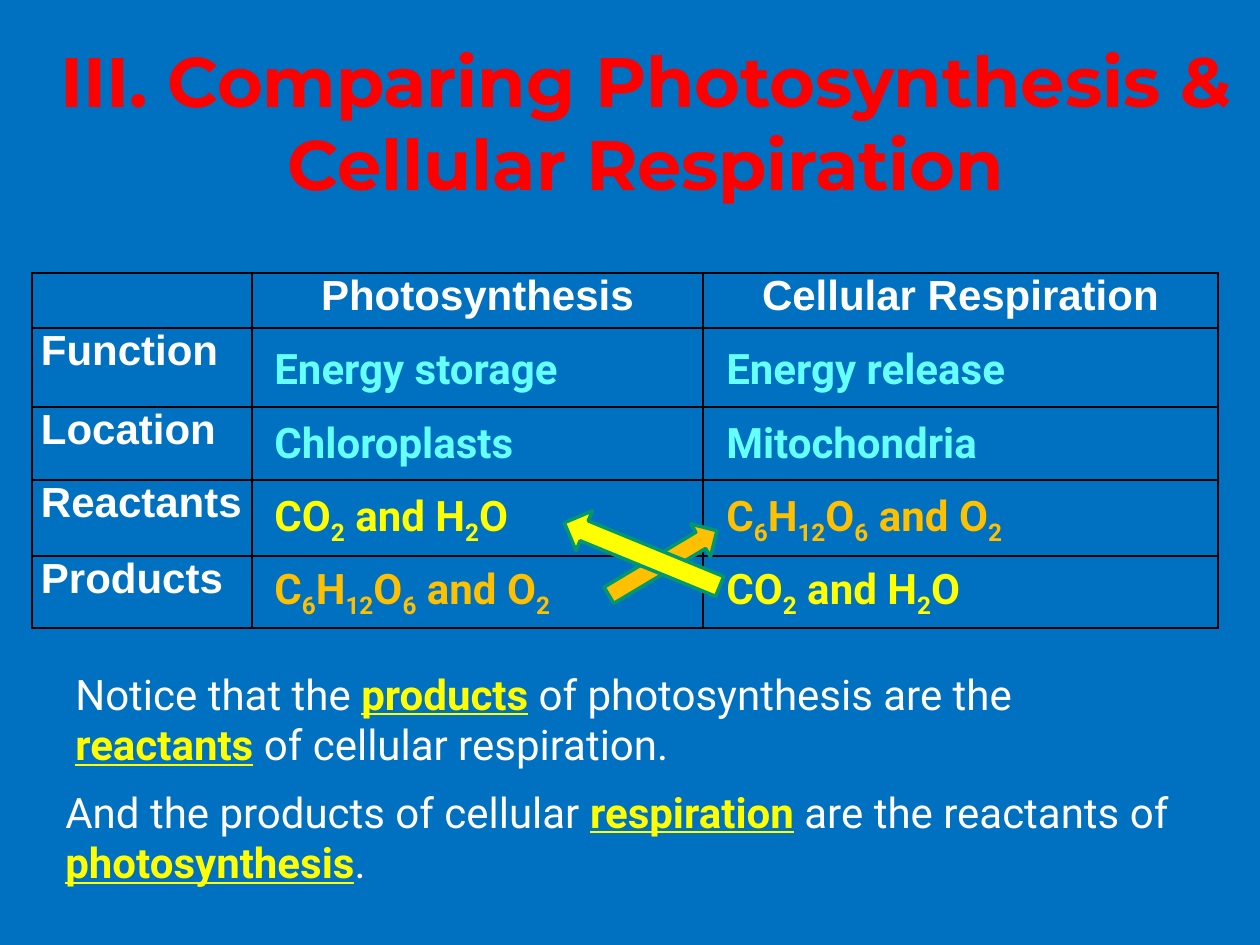
import pptx
import pptx.util
import pptx.dml.color
import pptx.enum.shapes
import pptx.enum.text
import pptx.oxml
import pptx.oxml.ns
from dataclasses import dataclass


@dataclass(frozen=True)
class Theme:
    background: str = "0070C0"
    title: str = "FF0000"
    text: str = "FFFFFF"
    process: str = "66FFFF"
    yellow: str = "FFFF00"
    orange: str = "FFC000"
    outline: str = "009771"
    border: str = "000000"
    title_font: str = "Montserrat"
    table_font: str = "Arial"
    body_font: str = "Roboto"
    title_size: int = 40
    body_size: int = 24


def px(length):
    return round(length * 914400 / 126)


def rgb(value):
    return pptx.dml.color.RGBColor.from_string(value)


class SlideBuilder:
    def __init__(self, slide, theme):
        self.slide = slide
        self.theme = theme
        fill = slide.background.fill
        fill.solid()
        fill.fore_color.rgb = rgb(theme.background)

    def style(self, paragraph, name, size, color, bold):
        font = paragraph.font
        font.name = name
        font.size = pptx.util.Pt(size)
        font.color.rgb = rgb(color)
        font.bold = bold

    def title(self, text, left, top, width, height):
        shape = self.slide.shapes.title
        shape.left, shape.top = px(left), px(top)
        shape.width, shape.height = px(width), px(height)
        frame = shape.text_frame
        frame.text = text
        frame.auto_size = pptx.enum.text.MSO_AUTO_SIZE.NONE
        frame.vertical_anchor = pptx.enum.text.MSO_ANCHOR.MIDDLE
        paragraph = frame.paragraphs[0]
        paragraph.alignment = pptx.enum.text.PP_ALIGN.CENTER
        self.style(paragraph, self.theme.title_font, self.theme.title_size,
                   self.theme.title, True)

    def border(self, cell):
        properties = cell._tc.get_or_add_tcPr()
        for side in ("lnL", "lnR", "lnT", "lnB"):
            properties.append(pptx.oxml.parse_xml(
                f'<a:{side} {pptx.oxml.ns.nsdecls("a")} w="12700"><a:solidFill>'
                f'<a:srgbClr val="{self.theme.border}"/></a:solidFill></a:{side}>'))

    def table(self, left, top, widths, heights, headers, labels):
        table = self.slide.shapes.add_table(
            len(heights), len(widths), px(left), px(top),
            px(sum(widths)), px(sum(heights))).table
        table.first_row = table.horz_banding = False
        for column, width in zip(table.columns, widths):
            column.width = px(width)
        for row, height in zip(table.rows, heights):
            row.height = px(height)
        for cell in table.iter_cells():
            self.border(cell)
            cell.fill.background()
        for index, text in enumerate(headers, 1):
            self.label(table.cell(0, index), text, pptx.enum.text.PP_ALIGN.CENTER)
        for index, text in enumerate(labels, 1):
            self.label(table.cell(index, 0), text, pptx.enum.text.PP_ALIGN.LEFT)

    def label(self, cell, text, alignment):
        cell.margin_left = cell.margin_right = px(9)
        cell.margin_top = cell.margin_bottom = 0
        cell.text = text
        paragraph = cell.text_frame.paragraphs[0]
        paragraph.alignment = alignment
        self.style(paragraph, self.theme.table_font, self.theme.body_size,
                   self.theme.text, True)

    def text(self, text, left, top, width, height, color, bold=False):
        frame = self.slide.shapes.add_textbox(
            px(left), px(top), px(width), px(height)).text_frame
        frame.word_wrap = True
        frame.auto_size = pptx.enum.text.MSO_AUTO_SIZE.SHAPE_TO_FIT_TEXT
        paragraph = frame.paragraphs[0]
        self.style(paragraph, self.theme.body_font, self.theme.body_size, color, bold)
        return paragraph

    def formula(self, text, left, top, width, height, color):
        paragraph = self.text(text, left, top, width, height, color, True)
        for index, part in enumerate(text.split("_")):
            run = paragraph.add_run()
            run.text = part
            if index % 2:
                run._r.get_or_add_rPr().set("baseline", "-25000")

    def note(self, text, left, top, width, height):
        paragraph = self.text(text, left, top, width, height, self.theme.text)
        for index, part in enumerate(text.split("*")):
            run = paragraph.add_run()
            run.text = part
            if index % 2:
                run.font.bold = run.font.underline = True
                run.font.color.rgb = rgb(self.theme.yellow)

    def arrow(self, left, top, width, height, rotation, color):
        shape = self.slide.shapes.add_shape(
            pptx.enum.shapes.MSO_SHAPE.RIGHT_ARROW,
            px(left), px(top), px(width), px(height))
        shape.rotation = rotation
        shape.shadow.inherit = False
        shape.fill.solid()
        shape.fill.fore_color.rgb = rgb(color)
        shape.line.color.rgb = rgb(self.theme.outline)
        shape.line.width = pptx.util.Pt(2)


def main():
    theme = Theme()
    presentation = pptx.Presentation()
    presentation.slide_width, presentation.slide_height = px(1260), px(945)
    slide = presentation.slides.add_slide(presentation.slide_layouts[5])
    builder = SlideBuilder(slide, theme)

    builder.title("III. Comparing Photosynthesis & Cellular Respiration",
                  32, 42, 1228, 158)
    builder.table(32, 273, (220, 451, 515), (55, 79, 73, 76, 72),
                  ("Photosynthesis", "Cellular Respiration"),
                  ("Function", "Location", "Reactants", "Products"))

    gases, sugar = "CO_2_ and H_2_O", "C_6_H_12_O_6_ and O_2_"
    answers = (
        (("Energy storage", theme.process), ("Energy release", theme.process)),
        (("Chloroplasts", theme.process), ("Mitochondria", theme.process)),
        ((gases, theme.yellow), (sugar, theme.orange)),
        ((sugar, theme.orange), (gases, theme.yellow)),
    )
    for row, pair in enumerate(answers):
        for left, (text, color) in zip((262, 714), pair):
            builder.formula(text.rstrip("_"), left, 336 + round(73.5 * row),
                            431, 64, color)

    builder.note("Notice that the *products* of photosynthesis are the "
                 "*reactants* of cellular respiration.", 63, 662, 1124, 115)
    builder.note("And the products of cellular *respiration* are the reactants of "
                 "*photosynthesis*.", 53, 780, 1144, 165)

    builder.arrow(600, 544, 126, 38, 329.1, theme.orange)
    builder.arrow(558, 533, 168, 43, 202.3, theme.yellow)
    presentation.save("out.pptx")


if __name__ == "__main__":
    main()
